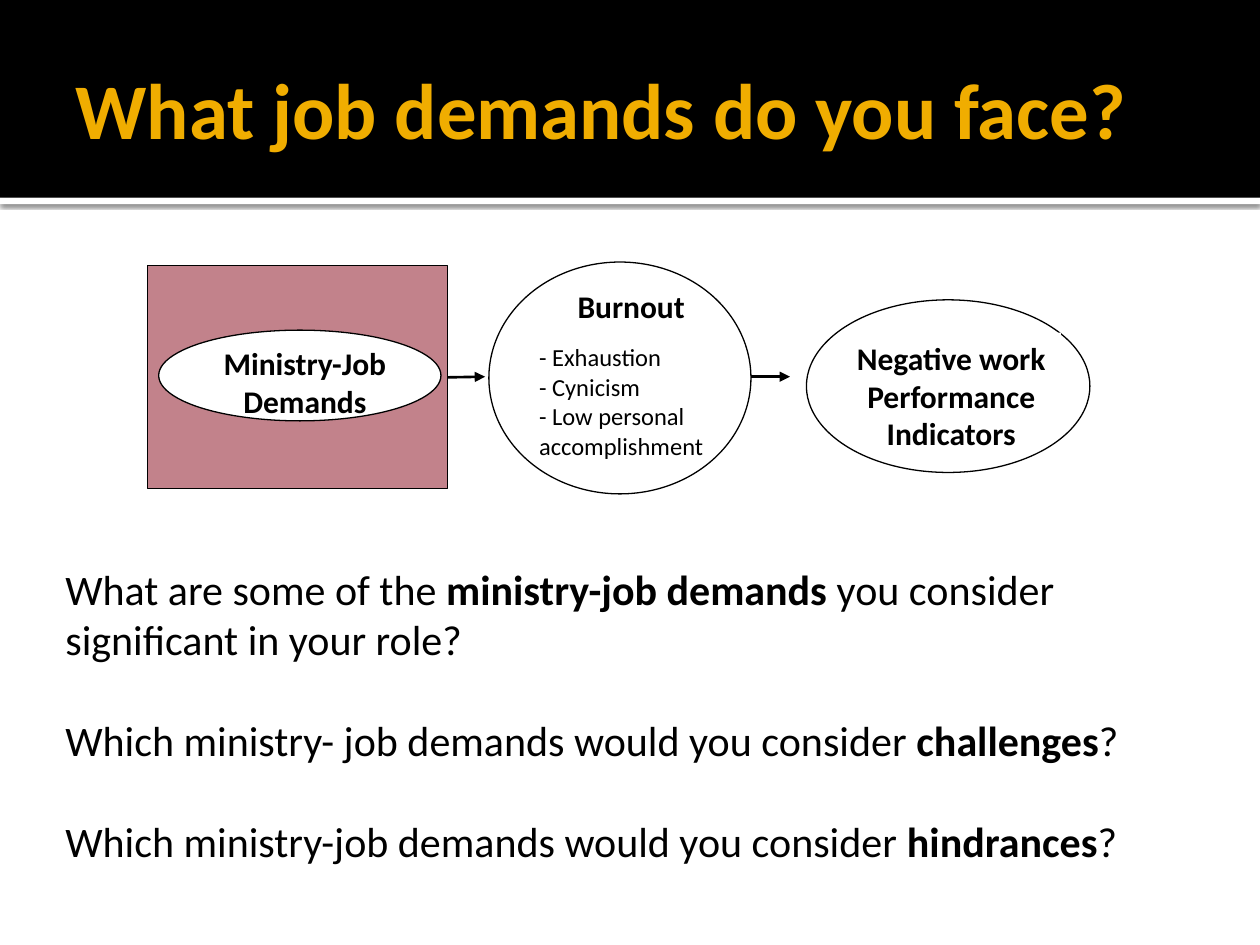
from pptx import Presentation
from pptx.dml.color import RGBColor
from pptx.enum.shapes import MSO_CONNECTOR, MSO_SHAPE
from pptx.enum.text import MSO_ANCHOR, PP_ALIGN
from pptx.oxml import parse_xml
from pptx.oxml.ns import nsdecls, qn
from pptx.util import Inches, Pt
from lxml.etree import SubElement

COLORS = {"black": "000000", "white": "FFFFFF", "gold": "F0AD00", "rose": "901929"}
FONT = "Calibri"


def color(name):
    return RGBColor.from_string(COLORS[name])


def add_block(slide, kind, box, fill, outlined=False):
    shape = slide.shapes.add_shape(kind, *map(Inches, box))
    shape.shadow.inherit = False
    shape.fill.solid()
    shape.fill.fore_color.rgb = color(fill)
    if outlined:
        shape.line.color.rgb = color("black")
        shape.line.width = Pt(0.75)
    else:
        shape.line.fill.background()
    return shape


def add_run(paragraph, text, size, bold=False, tint="black"):
    run = paragraph.add_run()
    run.text = text
    run.font.name = FONT
    run.font.size = Pt(size)
    run.font.bold = bold
    run.font.color.rgb = color(tint)


def add_text_frame(slide, box):
    frame = slide.shapes.add_textbox(*map(Inches, box)).text_frame
    frame.word_wrap = True
    return frame


def add_label(frame, text):
    paragraph = frame.paragraphs[0]
    paragraph.alignment = PP_ALIGN.CENTER
    paragraph.space_after = Pt(10)
    add_run(paragraph, text, 18, bold=True)


def add_arrow(slide, left, right, y, source=None):
    arrow = slide.shapes.add_connector(
        MSO_CONNECTOR.STRAIGHT, Inches(left), Inches(y), Inches(right), Inches(y))
    if source is not None:
        arrow.begin_connect(source, 3)
    arrow.line.color.rgb = color("black")
    arrow.line.width = Pt(1.5)
    SubElement(arrow.line._get_or_add_ln(), qn("a:tailEnd"), type="triangle")
    SubElement(arrow.element.spPr, qn("a:effectLst"))


def add_header(slide, box, text):
    left, top, width, height = box
    strip = add_block(slide, MSO_SHAPE.RECTANGLE, (left, top + height, width, 0.05), "white")
    strip.element.spPr.remove(strip.element.spPr.find(qn("a:effectLst")))
    strip.element.spPr.append(parse_xml(
        f'<a:effectLst {nsdecls("a")}>'
        f'<a:outerShdw blurRad="{Pt(2.5)}" dist="{Pt(0.8)}" dir="5400000" rotWithShape="0">'
        f'<a:srgbClr val="{COLORS["black"]}"><a:alpha val="60000"/></a:srgbClr>'
        '</a:outerShdw></a:effectLst>'))
    band = add_block(slide, MSO_SHAPE.RECTANGLE, box, "black")

    title = slide.shapes.title
    for shape in (strip, band):
        title.element.addprevious(shape.element)
    title.left, title.top = Inches(left + 0.5), Inches(top + 0.17)
    title.width, title.height = Inches(width - 1), Inches(height - 0.2)
    frame = title.text_frame
    frame.vertical_anchor = MSO_ANCHOR.MIDDLE
    frame.margin_left = Inches(0.1)
    frame.margin_right = frame.margin_top = frame.margin_bottom = Inches(0.05)
    frame.paragraphs[0].alignment = PP_ALIGN.LEFT
    add_run(frame.paragraphs[0], text, 45, bold=True, tint="gold")


def add_demands(slide, box):
    left, top, width, height = box
    panel = add_block(slide, MSO_SHAPE.RECTANGLE, box, "rose", outlined=True)
    fill_color = panel.element.spPr.find(qn("a:solidFill"))[0]
    SubElement(fill_color, qn("a:alpha"), val="54000")
    add_block(slide, MSO_SHAPE.OVAL, (left + 0.09, top + 0.51, 2.24, 0.72), "white", outlined=True)
    frame = add_text_frame(slide, (left + 0.4, top + 0.57, 1.7, 0.35))
    add_label(frame, "Ministry-Job Demands")
    return panel


def add_burnout(slide, box):
    left, top, width, height = box
    add_block(slide, MSO_SHAPE.OVAL, box, "white", outlined=True)
    frame = add_text_frame(slide, (left + 0.3, top + 0.15, 1.66, 1.38))
    add_label(frame, "Burnout")
    symptoms = frame.add_paragraph()
    symptoms.space_after = Pt(10)
    for index, text in enumerate(("- Exhaustion", "- Cynicism", "- Low personal accomplishment")):
        if index:
            symptoms.add_line_break()
        add_run(symptoms, text, 14)


def add_outcome(slide, box):
    left, top, width, height = box
    add_block(slide, MSO_SHAPE.OVAL, box, "white", outlined=True)
    label = add_block(slide, MSO_SHAPE.RECTANGLE, (left + 0.28, top + 0.26, 1.74, 0.68), "white")
    label.text_frame.word_wrap = True
    label.text_frame.vertical_anchor = MSO_ANCHOR.TOP
    add_label(label.text_frame, "Negative work Performance Indicators")


def add_questions(slide, box, questions):
    frame = add_text_frame(slide, box)
    for index, (start, emphasis, end) in enumerate(questions):
        paragraph = frame.add_paragraph() if index else frame.paragraphs[0]
        if index:
            paragraph.space_before = Pt(29)
        add_run(paragraph, start, 24)
        add_run(paragraph, emphasis, 24, bold=True)
        add_run(paragraph, end, 24)


def main():
    presentation = Presentation()
    presentation.slide_width, presentation.slide_height = Inches(10), Inches(7.5)
    slide = presentation.slides.add_slide(presentation.slide_layouts[5])
    add_header(slide, (0, 0, 10, 1.57), "What job demands do you face?")
    add_outcome(slide, (6.4, 2.38, 2.25, 1.37))
    add_burnout(slide, (3.88, 2.08, 2.08, 1.84))
    panel = add_demands(slide, (1.17, 2.11, 2.38, 1.77))
    add_arrow(slide, 3.55, 3.85, 2.99, panel)
    add_arrow(slide, 5.96, 6.27, 2.99)
    add_questions(slide, (0.42, 4.42, 9.25, 3), (
        ("What are some of the ", "ministry-job demands",
         " you consider significant in your role?"),
        ("Which ministry- job demands would you consider ", "challenges", "?"),
        ("Which ministry-job demands would you consider ", "hindrances", "?"),
    ))
    presentation.save("out.pptx")


if __name__ == "__main__":
    main()
